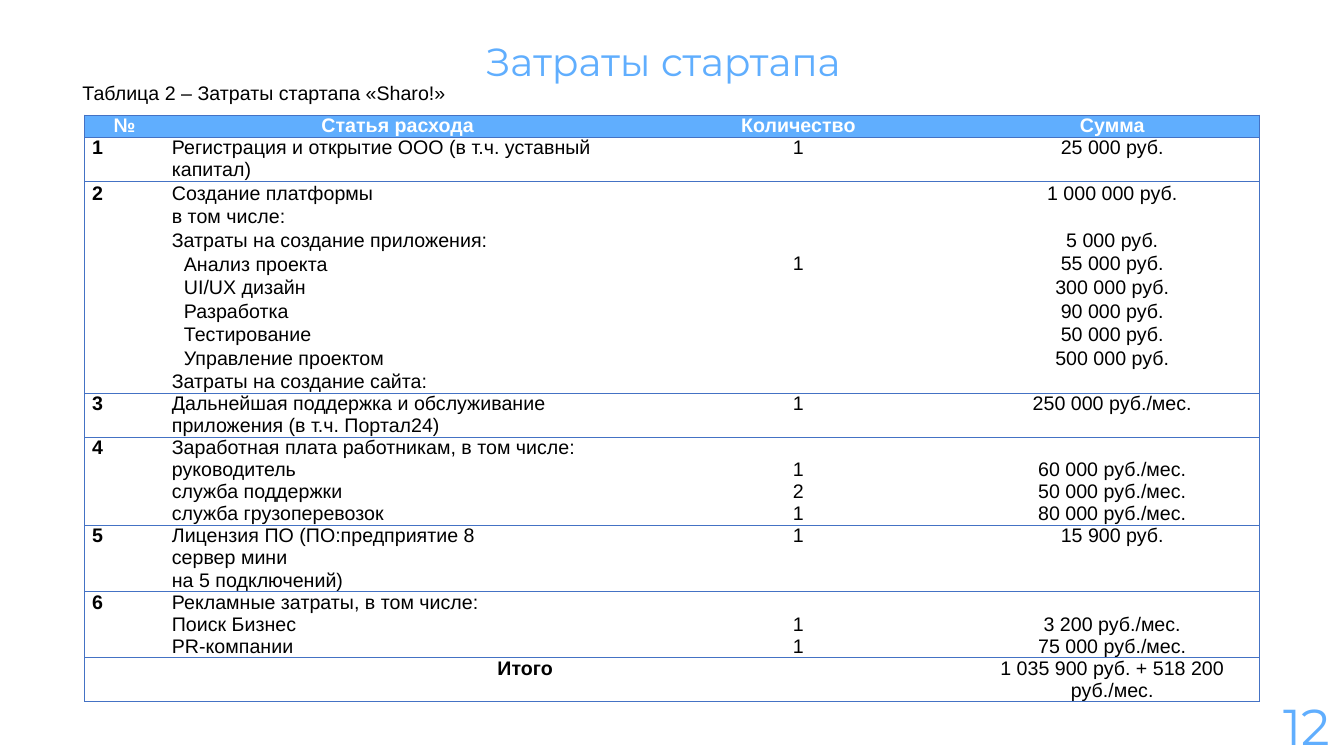
from lxml.etree import SubElement
from pptx import Presentation
from pptx.dml.color import RGBColor
from pptx.enum.text import MSO_ANCHOR, PP_ALIGN
from pptx.oxml.ns import qn
from pptx.util import Pt

BLUE, EDGE, BLACK, WHITE = "60AEFE", "4472C4", "000000", "FFFFFF"
LINE = 15.7  # height of one table line
LOOSE = 1.07  # line spacing of the platform row
WIDTHS = (56.9, 333.4, 239, 209.5)
HEAD = ("№", "Статья расхода", "Количество", "Сумма")
STAGES = ("Анализ проекта", "UI/UX дизайн", "Разработка", "Тестирование",
          "Управление проектом")

# Items, counts, sums; lines skipped above counts and sums; line count
COSTS = (
    (["Регистрация и открытие ООО (в т.ч. уставный капитал)"],
     ["1"], ["25 000 руб."], 0, 0, 2),
    (["Создание платформы", "в том числе:", "Затраты на создание приложения:",
      *STAGES, "Затраты на создание сайта:"],
     ["1"],
     ["1 000 000 руб.", "5 000 руб.", "55 000 руб.", "300 000 руб.",
      "90 000 руб.", "50 000 руб.", "500 000 руб."], 3, 0, 9),
    (["Дальнейшая поддержка и обслуживание приложения (в т.ч. Портал24)"],
     ["1"], ["250 000 руб./мес."], 0, 0, 2),
    (["Заработная плата работникам, в том числе:", "руководитель",
      "служба поддержки", "служба грузоперевозок"],
     ["1", "2", "1"],
     ["60 000 руб./мес.", "50 000 руб./мес.", "80 000 руб./мес."], 1, 1, 4),
    (["Лицензия ПО (ПО:предприятие 8\vсервер мини\vна 5 подключений)"],
     ["1"], ["15 900 руб."], 0, 0, 3),
    (["Рекламные затраты, в том числе:", "Поиск Бизнес", "PR-компании"],
     ["1", "1"], ["3 200 руб./мес.", "75 000 руб./мес."], 1, 1, 3),
)
TOTAL = "1 035 900 руб. + 518 200 руб./мес."


def tint(code):
    return RGBColor.from_string(code)


def style(para, size, face, color, bold=False):
    font = para.font
    font.size, font.name, font.bold = Pt(size), face, bold
    font.color.rgb = tint(color)


def label(slide, box, text, size, face, color, wrap=False, align=PP_ALIGN.LEFT,
          anchor=MSO_ANCHOR.TOP):
    frame = slide.shapes.add_textbox(*map(Pt, box)).text_frame
    frame.word_wrap = wrap
    frame.vertical_anchor = anchor
    para = frame.paragraphs[0]
    para.text, para.alignment = text, align
    style(para, size, face, color)


def edge(cell, sides):
    props = cell._tc.get_or_add_tcPr()
    for side in sides:
        line = SubElement(props, qn("a:ln" + side), w=str(Pt(0.5)))
        fill = SubElement(line, qn("a:solidFill"))
        SubElement(fill, qn("a:srgbClr"), val=EDGE)


def write(cell, lines, sides, color=BLACK, bold=False, center=True, skip=0,
          space=1.0):
    edge(cell, sides)
    cell.margin_left = cell.margin_right = Pt(5.4)
    cell.margin_top, cell.margin_bottom = Pt(skip * LINE * space), 0
    if color == WHITE:
        cell.fill.solid()
        cell.fill.fore_color.rgb = tint(BLUE)
    else:
        cell.fill.background()
    frame = cell.text_frame
    for i, text in enumerate(lines):
        para = frame.add_paragraph() if i else frame.paragraphs[0]
        para.text = text
        para.alignment = PP_ALIGN.CENTER if center else PP_ALIGN.LEFT
        if space != 1:
            para.line_spacing = space
        if text in STAGES:
            para._p.get_or_add_pPr().set("indent", str(Pt(8.6)))
        style(para, 14, "Arial", color, bold)


def costs(slide):
    tall = [1] + [row[-1] for row in COSTS] + [2]
    frame = slide.shapes.add_table(len(tall), len(WIDTHS), Pt(60.5), Pt(82.1),
                                   Pt(sum(WIDTHS)), Pt(LINE * sum(tall)))
    table = frame.table
    table.first_row = table.horz_banding = False
    # Plain style without grid
    table._tbl.tblPr.find(qn("a:tableStyleId")).text = (
        "{2D5ABB26-0587-4C30-8999-92F81FD0307C}")
    for col, wide in zip(table.columns, WIDTHS):
        col.width = Pt(wide)
    for row, count in zip(table.rows, tall):
        row.height = Pt(LINE * count * (LOOSE if count == 9 else 1))
    # Header
    rims = ("LTB", "TB", "TB", "RTB")
    for c, text in enumerate(HEAD):
        write(table.cell(0, c), [text], rims[c], WHITE, True)
    # Cost rows
    for r, (items, counts, sums, down, drop, size) in enumerate(COSTS, 1):
        space = LOOSE if size == 9 else 1
        write(table.cell(r, 0), [str(r)], rims[0], bold=True, center=False,
              space=space)
        write(table.cell(r, 1), items, rims[1], center=False, space=space)
        write(table.cell(r, 2), counts, rims[2], skip=down, space=space)
        write(table.cell(r, 3), sums, rims[3], skip=drop, space=space)
    # The sum of the app starts one line below the platform sum
    gap = table.cell(2, 3).text_frame.paragraphs[1]
    gap.space_before = Pt(LINE * LOOSE)
    # Total
    last = len(tall) - 1
    table.cell(last, 0).merge(table.cell(last, 2))
    write(table.cell(last, 0), ["Итого"], "LTB", bold=True)
    for c in (1, 2):
        edge(table.cell(last, c), "TB")
    write(table.cell(last, 3), [TOTAL], "RTB")


def main():
    deck = Presentation()
    deck.slide_width, deck.slide_height = Pt(960), Pt(540)
    slide = deck.slides.add_slide(deck.slide_layouts[6])
    costs(slide)
    # Title, page number, caption
    label(slide, (339.8, 23, 296, 41), "Затраты стартапа", 28, "Montserrat",
          BLUE)
    label(slide, (741, 504, 216, 28.8), "12", 36, "Montserrat", BLUE, True,
          PP_ALIGN.RIGHT, MSO_ANCHOR.MIDDLE)
    label(slide, (51.8, 54, 275, 24.5), "Таблица 2 – Затраты стартапа «Sharo!»",
          14, "Arial", BLACK)
    deck.save("out.pptx")


if __name__ == "__main__":
    main()
